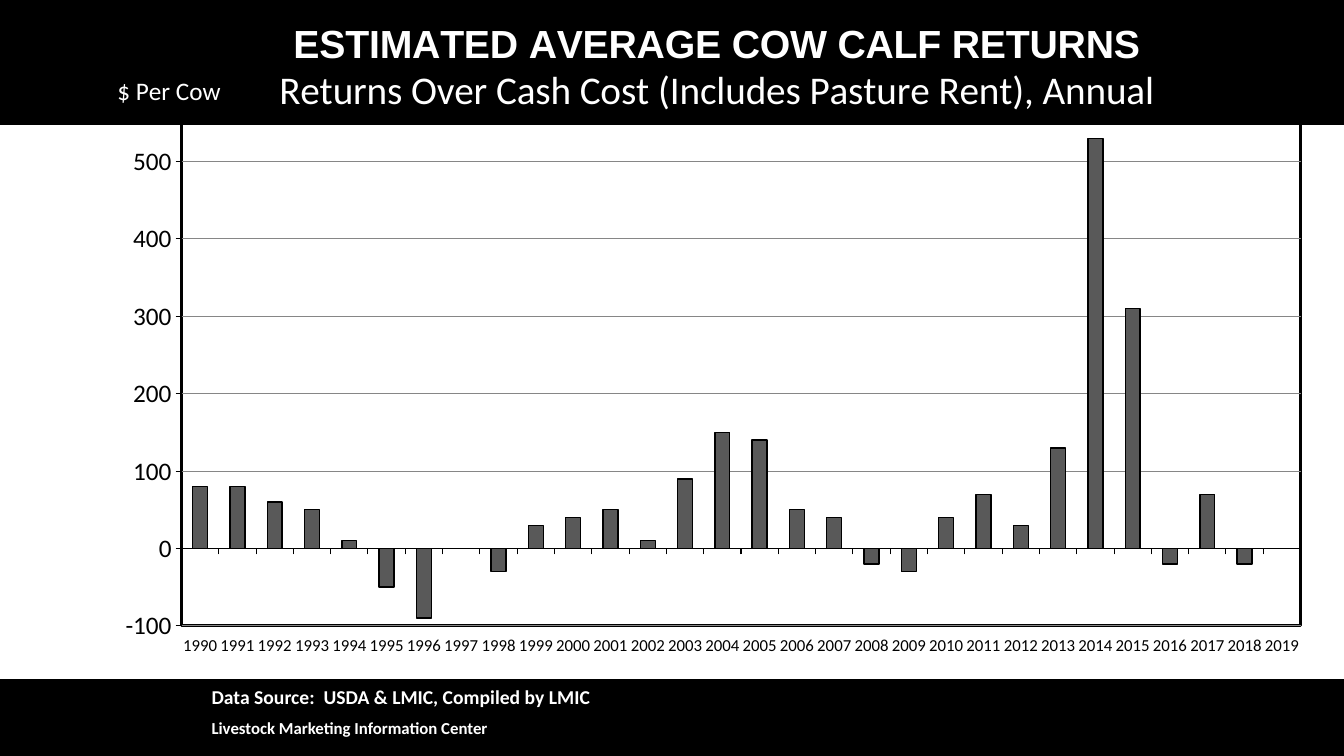
from lxml import etree
from pptx import Presentation
from pptx import util as u
from pptx.chart import data as chart_data
from pptx.dml import color
from pptx.enum import chart as charts, shapes, text
from pptx.oxml import ns

THEME = {
    "black": color.RGBColor(0, 0, 0),
    "white": color.RGBColor(255, 255, 255),
    "bar": color.RGBColor(0x59, 0x59, 0x59),
    "grid": color.RGBColor(0x86, 0x86, 0x86),
    "body": "Calibri", "heading": "Arial",
    "title": 28, "axis": 18, "source": 14, "small": 12,
}
CHART_WIDTH, CHART_HEIGHT = 12.45, 6.58
FIRST_YEAR = 1990
RETURNS = [80, 80, 60, 50, 10, -50, -90, 0, -30, 30,
           40, 50, 10, 90, 150, 140, 50, 40, -20, -30,
           40, 70, 30, 130, 530, 310, -20, 70, -20, 0]


def write(para, words, size, font=THEME["body"], bold=False, before=None):
    span = para.add_run()
    span.text = words
    span.font.size = u.Pt(size)
    span.font.name = font
    span.font.bold = bold
    span.font.color.rgb = THEME["white"]
    if before:
        para.space_before = u.Pt(before)


def place(element, index, **inches):
    """Lay out a chart part by hand, in inches from the chart's corner."""
    for old in element.findall(ns.qn("c:layout")):
        element.remove(old)
    layout = etree.Element(ns.qn("c:layout"))
    manual = etree.SubElement(layout, ns.qn("c:manualLayout"))
    if "w" in inches:
        etree.SubElement(manual, ns.qn("c:layoutTarget")).set("val", "inner")
    for axis in ("x", "y"):
        etree.SubElement(manual, ns.qn(f"c:{axis}Mode")).set("val", "edge")
    for name, length in inches.items():
        whole = CHART_WIDTH if name in "xw" else CHART_HEIGHT
        etree.SubElement(manual, ns.qn(f"c:{name}")).set("val", str(length / whole))
    element.insert(index, layout)


deck = Presentation()
deck.slide_width, deck.slide_height = u.Inches(13.33), u.Inches(7.5)
page = deck.slides.add_slide(deck.slide_layouts[6])

# Black bands at the top and bottom
for top, height in ((0, 1.23), (6.74, 0.76)):
    band = page.shapes.add_shape(shapes.MSO_SHAPE.RECTANGLE, 0, u.Inches(top),
                                 deck.slide_width, u.Inches(height))
    band.shadow.inherit = False
    band.fill.solid()
    band.fill.fore_color.rgb = THEME["black"]
    band.line.color.rgb = THEME["black"]
    band.line.width = u.Pt(1)

# Column chart of yearly returns
table = chart_data.CategoryChartData()
table.categories = [str(FIRST_YEAR + n) for n in range(len(RETURNS))]
table.add_series("Returns", RETURNS)
chart = page.shapes.add_chart(
    charts.XL_CHART_TYPE.COLUMN_CLUSTERED, u.Inches(0.89), 0,
    u.Inches(CHART_WIDTH), u.Inches(CHART_HEIGHT), table).chart
chart.has_legend = False
chart.font.name = THEME["body"]
chart.font.size = u.Pt(THEME["axis"])
chart.font.color.rgb = THEME["black"]

# Chart title
chart.has_title = True
title = chart.chart_title
frame = title.text_frame
write(frame.paragraphs[0], "ESTIMATED AVERAGE COW CALF RETURNS",
      THEME["title"], THEME["heading"], bold=True)
write(frame.add_paragraph(), "Returns Over Cash Cost (Includes Pasture Rent), Annual",
      THEME["title"])
place(title._element, 1, x=1.85, y=0.19)

# Columns
plot = chart.plots[0]
plot.gap_width = 150
plot.vary_by_categories = False
columns = plot.series[0]
columns.invert_if_negative = False
columns.format.fill.solid()
columns.format.fill.fore_color.rgb = THEME["bar"]
columns.format.line.color.rgb = THEME["black"]
columns.format.line.width = u.Pt(1)

# Axes
years, dollars = chart.category_axis, chart.value_axis
for axis in (years, dollars):
    axis.major_tick_mark = charts.XL_TICK_MARK.OUTSIDE
    axis.minor_tick_mark = charts.XL_TICK_MARK.NONE
    axis.format.line.color.rgb = THEME["black"]
    axis.format.line.width = u.Pt(0.75)
years.tick_label_position = charts.XL_TICK_LABEL_POSITION.LOW
years.tick_labels.font.size = u.Pt(THEME["small"])
dollars.minimum_scale, dollars.maximum_scale = -100, 550
dollars.major_unit = 100
dollars.has_major_gridlines = True
dollars.major_gridlines.format.line.color.rgb = THEME["grid"]
dollars.major_gridlines.format.line.width = u.Pt(0.75)
dollars.has_title = True
unit = dollars.axis_title
write(unit.text_frame.paragraphs[0], "$ Per Cow", THEME["axis"])
unit_body = unit._element.find(".//" + ns.qn("a:bodyPr"))
unit_body.set("rot", "0")
unit_body.set("vert", "horz")
place(unit._element, 1, x=0.23, y=0.68)

# Framed plot area on a clear chart background
area = chart._chartSpace.chart.plotArea
place(area, 0, x=0.91, y=1.22, w=11.1, h=4.99)
area.append(etree.fromstring(
    f'<c:spPr {ns.nsdecls("c", "a")}><a:solidFill><a:srgbClr val="{THEME["white"]}"/>'
    f'</a:solidFill><a:ln w="{u.Pt(2.25)}"><a:solidFill>'
    f'<a:srgbClr val="{THEME["black"]}"/></a:solidFill></a:ln></c:spPr>'))
chart._chartSpace.chart.addnext(etree.fromstring(
    f'<c:spPr {ns.nsdecls("c", "a")}><a:noFill/><a:ln><a:noFill/></a:ln></c:spPr>'))

# Source note
box = page.shapes.add_textbox(u.Inches(2), u.Inches(6.75), u.Inches(4.5), u.Inches(0.64))
note = box.text_frame
note.word_wrap = True
note.auto_size = text.MSO_AUTO_SIZE.SHAPE_TO_FIT_TEXT
write(note.paragraphs[0], "Data Source:  USDA & LMIC, Compiled by LMIC",
      THEME["source"], bold=True)
write(note.add_paragraph(), "Livestock Marketing Information Center",
      THEME["small"], bold=True, before=6)

deck.save("out.pptx")
